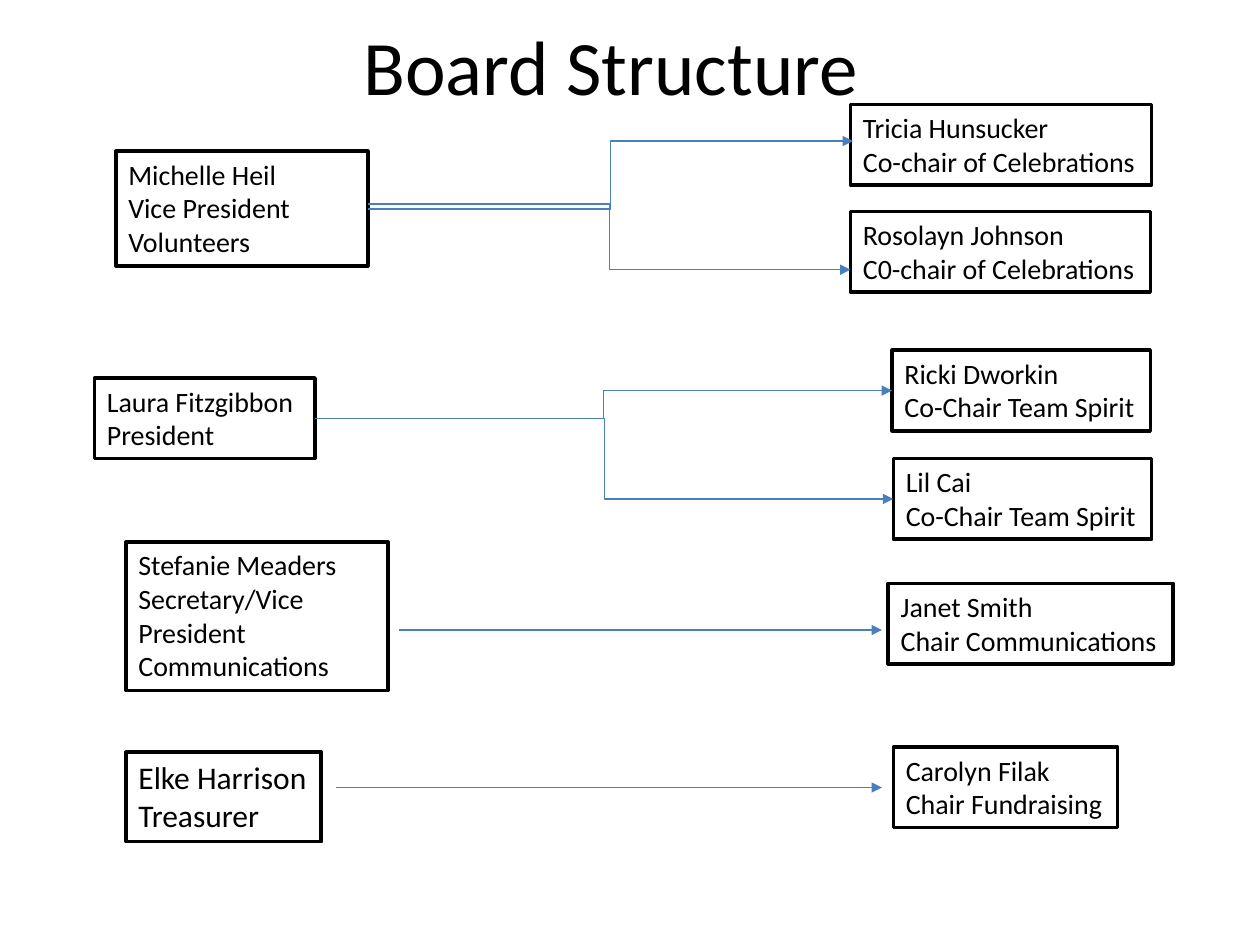
import pptx
import pptx.util
import pptx.dml.color
import pptx.enum.shapes
import pptx.enum.text
import pptx.oxml.ns
import lxml.etree

PX = 9144
BLACK = pptx.dml.color.RGBColor(0x00, 0x00, 0x00)
WHITE = pptx.dml.color.RGBColor(0xFF, 0xFF, 0xFF)
BLUE = pptx.dml.color.RGBColor(0x4B, 0x7E, 0xBC)
ELBOW = pptx.enum.shapes.MSO_CONNECTOR.ELBOW
STRAIGHT = pptx.enum.shapes.MSO_CONNECTOR.STRAIGHT


def add_text(slide, box, lines, size, align=pptx.enum.text.PP_ALIGN.LEFT):
    label = slide.shapes.add_textbox(*(length * PX for length in box))
    frame = label.text_frame
    frame.word_wrap = True
    frame.text = "\n".join(lines)
    for paragraph in frame.paragraphs:
        paragraph.alignment = align
        paragraph.font.name = "Calibri"
        paragraph.font.size = pptx.util.Pt(size)
        paragraph.font.color.rgb = BLACK
    return label


def add_title(slide, box, wording):
    title = add_text(slide, box, [wording], 44, pptx.enum.text.PP_ALIGN.CENTER)
    title.text_frame.vertical_anchor = pptx.enum.text.MSO_ANCHOR.MIDDLE


def add_member(slide, box, lines, size=16, wrap=False):
    member = add_text(slide, box, lines, size)
    member.text_frame.word_wrap = wrap
    member.text_frame.auto_size = pptx.enum.text.MSO_AUTO_SIZE.SHAPE_TO_FIT_TEXT
    member.fill.solid()
    member.fill.fore_color.rgb = WHITE
    member.line.color.rgb = BLACK
    member.line.width = pptx.util.Pt(2)


def add_arrow(slide, kind, start, end):
    arrow = slide.shapes.add_connector(kind, *(length * PX for length in start + end))
    arrow.line.color.rgb = BLUE
    arrow.line.width = pptx.util.Pt(0.75)
    qn = pptx.oxml.ns.qn
    lxml.etree.SubElement(arrow.line._get_or_add_ln(), qn("a:tailEnd"), type="triangle")
    lxml.etree.SubElement(arrow._element.spPr, qn("a:effectLst"))


def add_branch(slide, box, officer, chairs, arrows, kind, size=16, wrap=True):
    left, top, width, height = box
    add_member(slide, box, officer, size, wrap)
    for (x, y, chair_width), lines in chairs:
        add_member(slide, (left + x, top + y, chair_width, 64), lines)
    for gap, start_y, end_x, end_y in arrows:
        start = (left + width + gap, top + start_y)
        add_arrow(slide, kind, start, (left + end_x, top + end_y))


def main():
    deck = pptx.Presentation()
    deck.slide_width = 1000 * PX
    deck.slide_height = 750 * PX
    slide = deck.slides.add_slide(deck.slide_layouts[6])

    add_title(slide, (35, 0, 900, 103), "Board Structure")
    add_branch(
        slide, (92, 120, 200, 91), ["Michelle Heil", "Vice President Volunteers"],
        [((583, -37, 239), ["Tricia Hunsucker", "Co-chair of Celebrations"]),
         ((583, 48, 238), ["Rosolayn Johnson", "C0-chair of Celebrations"])],
        [(0, 42, 583, 94), (0, 46, 585, -8)], ELBOW)
    add_branch(
        slide, (75, 300, 175, 64), ["Laura Fitzgibbon", "President"],
        [((633, -22, 205), ["Ricki Dworkin", "Co-Chair Team Spirit"]),
         ((634, 64, 205), ["Lil Cai", "Co-Chair Team Spirit"])],
        [(0, 32, 633, 10), (0, 32, 634, 96)], ELBOW)
    add_branch(
        slide, (100, 430, 208, 118),
        ["Stefanie Meaders Secretary/Vice President Communications"],
        [((605, 33, 226), ["Janet Smith", "Chair Communications"])],
        [(9, 70, 600, 70)], STRAIGHT)
    add_branch(
        slide, (100, 597, 155, 71), ["Elke Harrison", "Treasurer"],
        [((609, -4, 178), ["Carolyn Filak", "Chair Fundraising"])],
        [(12, 28, 600, 28)], STRAIGHT, size=18, wrap=False)

    deck.save("out.pptx")


if __name__ == "__main__":
    main()
